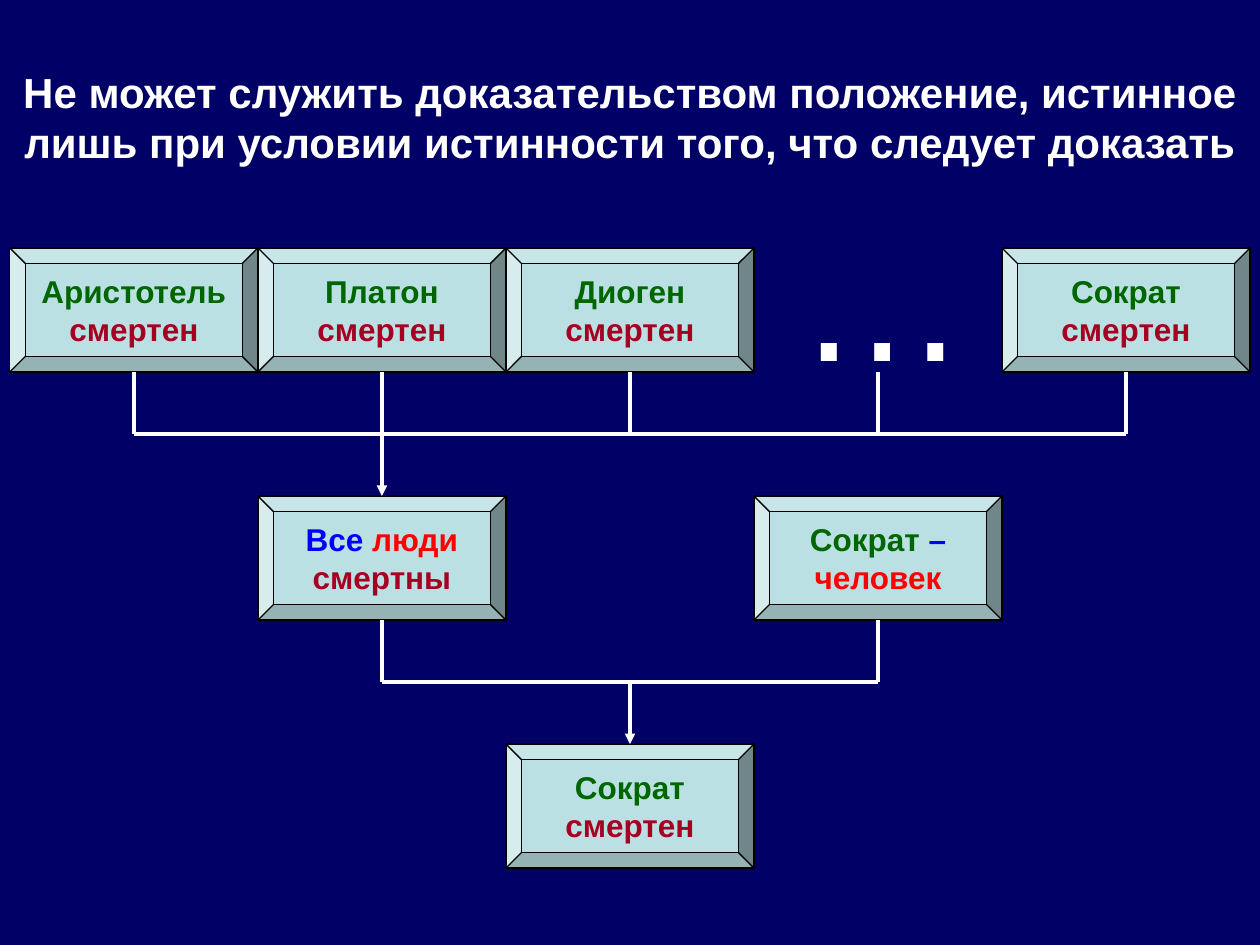
import dataclasses
import itertools
import typing

import pptx
import pptx.dml.color
import pptx.enum.shapes
import pptx.enum.text
import pptx.oxml.ns
import pptx.oxml.xmlchemy
import pptx.presentation
import pptx.shapes.autoshape
import pptx.shapes.connector
import pptx.slide
import pptx.util
import lxml.etree

Pt = pptx.util.Pt

COLORS = {
    "background": "000066",
    "white": "FFFFFF",
    "bevel": "BBE0E3",
    "outline": "000000",
    "person": "006600",
    "mortal": "A50021",
    "human": "FF0000",
    "logic": "0000FF",
}
FONT = "Arial"
SLIDE_WIDTH, SLIDE_HEIGHT = 720, 540
BOX_WIDTH, BOX_HEIGHT = 141.74, 70.87
FIRST_LEFT = (SLIDE_WIDTH - 5 * BOX_WIDTH) / 2
FIRST_TOP = 141.74
ROW_PITCH = 2 * BOX_HEIGHT
STEM = BOX_HEIGHT / 2
BOTTOM_SITE = 2
BEVEL_TOP_SITE = 6

Words = tuple[str, str]
Point = tuple[float, float]


@dataclasses.dataclass(frozen=True)
class Statement:
    column: float
    row: int
    lines: tuple[tuple[Words, ...], ...]

    @property
    def left(self) -> float:
        return FIRST_LEFT + self.column * BOX_WIDTH

    @property
    def top(self) -> float:
        return FIRST_TOP + self.row * ROW_PITCH


def mortal(name: str, column: float, row: int) -> Statement:
    return Statement(column, row, (((name, "person"),), (("смертен", "mortal"),)))


ARISTOTLE = mortal("Аристотель", 0, 0)
PLATO = mortal("Платон", 1, 0)
DIOGENES = mortal("Диоген", 2, 0)
SOCRATES = mortal("Сократ", 4, 0)
ALL_MORTAL = Statement(
    1, 1, ((("Все ", "logic"), ("люди", "human")), (("смертны", "mortal"),))
)
SOCRATES_HUMAN = Statement(
    3, 1, ((("Сократ", "person"), (" –", "logic")), (("человек", "human"),))
)
CONCLUSION = mortal("Сократ", 2, 2)
STATEMENTS = (
    ARISTOTLE, PLATO, DIOGENES, SOCRATES, ALL_MORTAL, SOCRATES_HUMAN, CONCLUSION,
)


def rgb(name: str) -> pptx.dml.color.RGBColor:
    return pptx.dml.color.RGBColor.from_string(COLORS[name])


def format_font(font: typing.Any, size: float, color: str, bold: bool) -> None:
    font.name = FONT
    font.size = Pt(size)
    font.bold = bold
    font.color.rgb = rgb(color)


def column_center(column: float) -> float:
    return FIRST_LEFT + (column + 0.5) * BOX_WIDTH


def row_bottom(row: int) -> float:
    return FIRST_TOP + row * ROW_PITCH + BOX_HEIGHT


def draw_title(slide: pptx.slide.Slide) -> None:
    title = slide.shapes.title
    title.left, title.top, title.width, title.height = Pt(2), Pt(21.6), Pt(716), Pt(90)
    frame = title.text_frame
    frame.text = (
        "Не может служить доказательством положение, истинное "
        "лишь при условии истинности того, что следует доказать"
    )
    frame.vertical_anchor = pptx.enum.text.MSO_ANCHOR.MIDDLE
    frame.auto_size = pptx.enum.text.MSO_AUTO_SIZE.NONE
    paragraph = frame.paragraphs[0]
    paragraph.alignment = pptx.enum.text.PP_ALIGN.CENTER
    format_font(paragraph.runs[0].font, 24, "white", True)


def draw_statement(
    slide: pptx.slide.Slide, statement: Statement
) -> pptx.shapes.autoshape.Shape:
    bevel = slide.shapes.add_shape(
        pptx.enum.shapes.MSO_SHAPE.BEVEL,
        Pt(statement.left), Pt(statement.top), Pt(BOX_WIDTH), Pt(BOX_HEIGHT),
    )
    bevel.shadow.inherit = False
    bevel.fill.solid()
    bevel.fill.fore_color.rgb = rgb("bevel")
    bevel.line.color.rgb = rgb("outline")
    bevel.line.width = Pt(0.75)
    frame = bevel.text_frame
    frame.word_wrap = False
    frame.vertical_anchor = pptx.enum.text.MSO_ANCHOR.MIDDLE
    paragraph = frame.paragraphs[0]
    paragraph.alignment = pptx.enum.text.PP_ALIGN.CENTER
    for index, line in enumerate(statement.lines):
        if index:
            paragraph.add_line_break()
        for words, color in line:
            run = paragraph.add_run()
            run.text = words
            format_font(run.font, 18, color, True)
    return bevel


def draw_ellipsis(slide: pptx.slide.Slide) -> None:
    ellipsis = slide.shapes.add_textbox(Pt(449.3), Pt(107.3), Pt(110.2), Pt(122.4))
    frame = ellipsis.text_frame
    frame.text = "…"
    frame.word_wrap = False
    frame.auto_size = pptx.enum.text.MSO_AUTO_SIZE.SHAPE_TO_FIT_TEXT
    format_font(frame.paragraphs[0].runs[0].font, 96, "white", False)


def draw_line(
    slide: pptx.slide.Slide, start: Point, end: Point, arrow: bool = False
) -> pptx.shapes.connector.Connector:
    line = slide.shapes.add_connector(
        pptx.enum.shapes.MSO_CONNECTOR.STRAIGHT, *(Pt(value) for value in start + end)
    )
    line.line.color.rgb = rgb("white")
    line.line.width = Pt(2)
    properties = line._element.spPr
    if arrow:
        tail = lxml.etree.SubElement(
            properties.find(pptx.oxml.ns.qn("a:ln")), pptx.oxml.ns.qn("a:tailEnd")
        )
        tail.set("type", "triangle")
    lxml.etree.SubElement(properties, pptx.oxml.ns.qn("a:effectLst"))
    return line


def draw_inference(
    slide: pptx.slide.Slide,
    bevels: dict[Statement, pptx.shapes.autoshape.Shape],
    premises: tuple[Statement, ...],
    conclusion: Statement,
    bus_columns: tuple[int, ...],
) -> None:
    bottom = row_bottom(premises[0].row)
    bus = bottom + STEM
    for first, last in itertools.pairwise(bus_columns):
        draw_line(slide, (column_center(first), bus), (column_center(last), bus))
    for premise in premises:
        center = column_center(premise.column)
        stem = draw_line(slide, (center, bottom), (center, bus))
        stem.begin_connect(bevels[premise], BOTTOM_SITE)
    center = column_center(conclusion.column)
    arrow = draw_line(slide, (center, bus), (center, conclusion.top), arrow=True)
    arrow.end_connect(bevels[conclusion], 0)
    arrow._element.find(".//" + pptx.oxml.ns.qn("a:endCxn")).set(
        "idx", str(BEVEL_TOP_SITE)
    )


def main() -> None:
    presentation = pptx.Presentation()
    presentation.slide_width = Pt(SLIDE_WIDTH)
    presentation.slide_height = Pt(SLIDE_HEIGHT)
    slide = presentation.slides.add_slide(presentation.slide_layouts[5])
    slide.background.fill.solid()
    slide.background.fill.fore_color.rgb = rgb("background")
    draw_title(slide)
    bevels = {statement: draw_statement(slide, statement) for statement in STATEMENTS}
    draw_ellipsis(slide)
    draw_inference(
        slide, bevels, (ARISTOTLE, PLATO, DIOGENES, SOCRATES), ALL_MORTAL, (0, 1, 4)
    )
    others = column_center(3)
    draw_line(slide, (others, row_bottom(0)), (others, row_bottom(0) + STEM))
    draw_inference(slide, bevels, (ALL_MORTAL, SOCRATES_HUMAN), CONCLUSION, (1, 2, 3))
    presentation.save("out.pptx")


if __name__ == "__main__":
    main()
